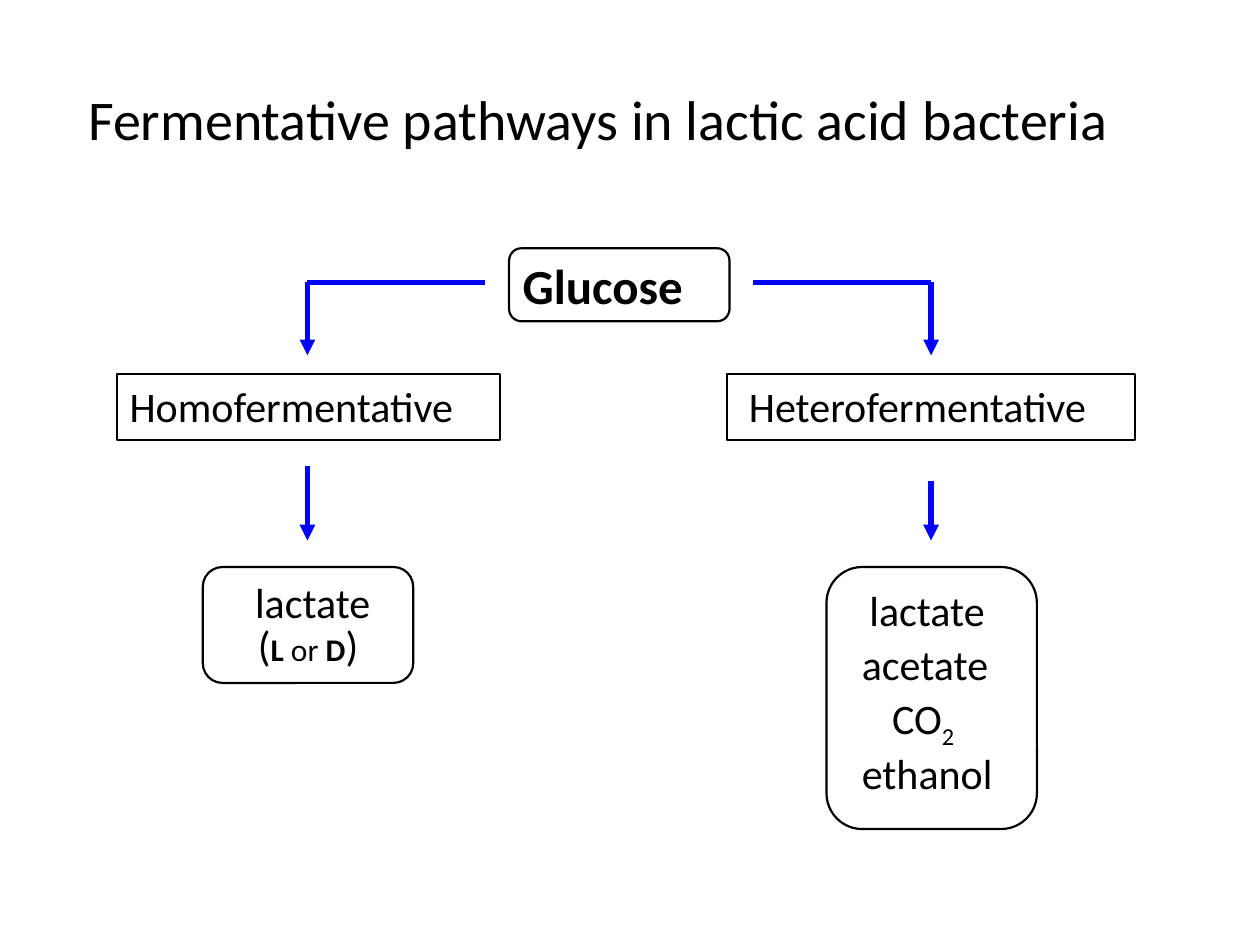
"""Build the slide on fermentative pathways in lactic acid bacteria."""
import pptx
import pptx.util
import pptx.dml.color
import pptx.enum.shapes
import pptx.enum.text
import pptx.oxml.ns
from lxml import etree

Inches, Pt = pptx.util.Inches, pptx.util.Pt
SHAPE = pptx.enum.shapes.MSO_SHAPE
ALIGN = pptx.enum.text.PP_ALIGN
FONT, BLACK, BLUE = "Calibri", "000000", "0000FF"
LEFT_X, RIGHT_X = 2.44, 7.39
BRANCH_Y, PRODUCT_Y = 2.24, 4.5

TITLE = (0.5, 0.62, 9.28, 0.63, " Fermentative pathways in lactic acid bacteria")
GLUCOSE = (4.06, 2.03, 1.71, 0.47, " Glucose")
PATHWAYS = [
    (0.93, 3.04, "Homofermentative"),
    (5.77, 3.24, " Heterofermentative"),
]
HETERO_PRODUCTS = [
    (6.9, 0.98, [("lactate", 24, False)]),
    (6.84, 1.09, [("acetate", 24, False)]),
    (7.08, 0.62, [("CO", 24, False), ("2", 24, False, -25000)]),
    (6.84, 1.1, [("ethanol", 24, False)]),
]
HOMO_PRODUCTS = [
    [(" lactate", 24, False)],
    [("(", 24, False), ("L", 18, True), (" or ", 18, False),
     ("D", 18, True), (")", 24, False)],
]
ROUNDED = [
    (4.04, 1.97, 1.75, 0.58),
    (6.56, PRODUCT_Y, 1.67, 2.08),
    (1.61, PRODUCT_Y, 1.67, 0.92),
]
BRANCHES = [(3.85, LEFT_X, 3.7), (5.98, RIGHT_X, 3.82)]


def rgb(color):
    return pptx.dml.color.RGBColor.from_string(color)


def write(sp, paragraphs, inset=True, align=ALIGN.LEFT, spacing=None):
    tf = sp.text_frame
    tf.word_wrap = True
    tf.vertical_anchor = pptx.enum.text.MSO_ANCHOR.TOP
    if not inset:
        tf.margin_left = tf.margin_right = tf.margin_top = tf.margin_bottom = 0
    for i, runs in enumerate(paragraphs):
        p = tf.add_paragraph() if i else tf.paragraphs[0]
        p.alignment = align
        if spacing:
            p.line_spacing = spacing
        for text, size, bold, *baseline in runs:
            r = p.add_run()
            r.text = text
            r.font.name, r.font.size, r.font.bold = FONT, Pt(size), bold
            r.font.color.rgb = rgb(BLACK)
            if baseline:
                r.font._element.set("baseline", str(baseline[0]))


def add_text(s, box, paragraphs, **options):
    write(s.shapes.add_textbox(*map(Inches, box)), paragraphs, **options)


def add_box(s, kind, box):
    sp = s.shapes.add_shape(kind, *map(Inches, box))
    sp.shadow.inherit = False
    sp.fill.background()
    sp.line.color.rgb = rgb(BLACK)
    sp.line.width = Pt(1.25)
    return sp


def add_line(s, x1, y1, x2, y2, arrow=True):
    straight = pptx.enum.shapes.MSO_CONNECTOR.STRAIGHT
    sp = s.shapes.add_connector(straight, *map(Inches, (x1, y1, x2, y2)))
    sp.line.color.rgb = rgb(BLUE)
    sp.line.width = Pt(3)
    qn = pptx.oxml.ns.qn
    if arrow:
        etree.SubElement(sp.line._get_or_add_ln(), qn("a:tailEnd"), type="triangle")
    etree.SubElement(sp._element.spPr, qn("a:effectLst"))


def main():
    prs = pptx.Presentation()
    prs.slide_width, prs.slide_height = Inches(10), Inches(7.5)
    s = prs.slides.add_slide(prs.slide_layouts[6])

    for i, (x, w, runs) in enumerate(HETERO_PRODUCTS):
        add_text(s, (x, 4.64 + 0.43 * i, w, 0.4), [runs], inset=False)
    add_text(s, (1.91, 4.64, 1.07, 0.68), HOMO_PRODUCTS,
             inset=False, align=ALIGN.CENTER, spacing=0.85)

    for start, x, top in BRANCHES:
        add_line(s, start, BRANCH_Y, x, BRANCH_Y, arrow=False)
        add_line(s, x, BRANCH_Y, x, 2.82)
        add_line(s, x, top, x, 4.29)

    for x, w, name in PATHWAYS:
        write(add_box(s, SHAPE.RECTANGLE, (x, 2.97, w, 0.52)), [[(name, 24, False)]])

    add_text(s, GLUCOSE[:4], [[(GLUCOSE[4], 28, True)]], inset=False)
    for box in ROUNDED:
        add_box(s, SHAPE.ROUNDED_RECTANGLE, box).adjustments[0] = 0.17
    add_text(s, TITLE[:4], [[(TITLE[4], 32, False)]])

    prs.save("out.pptx")


if __name__ == "__main__":
    main()
